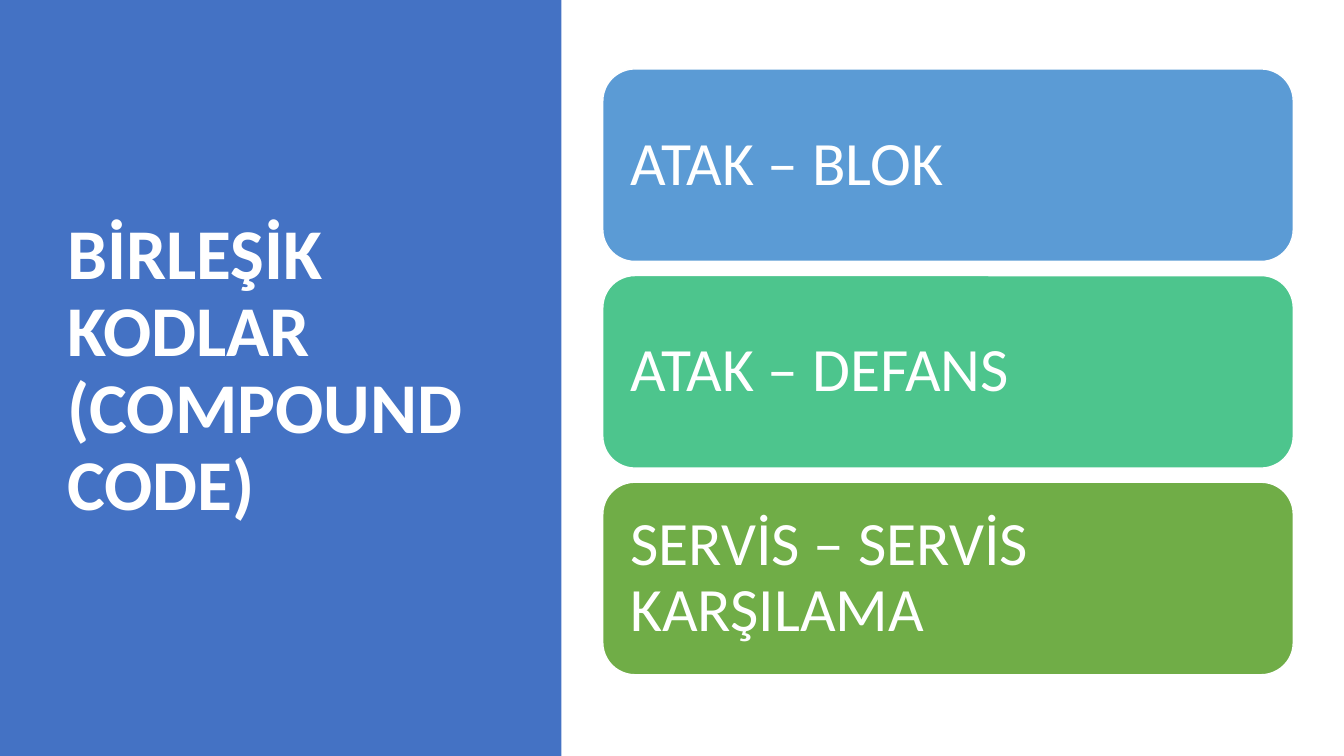
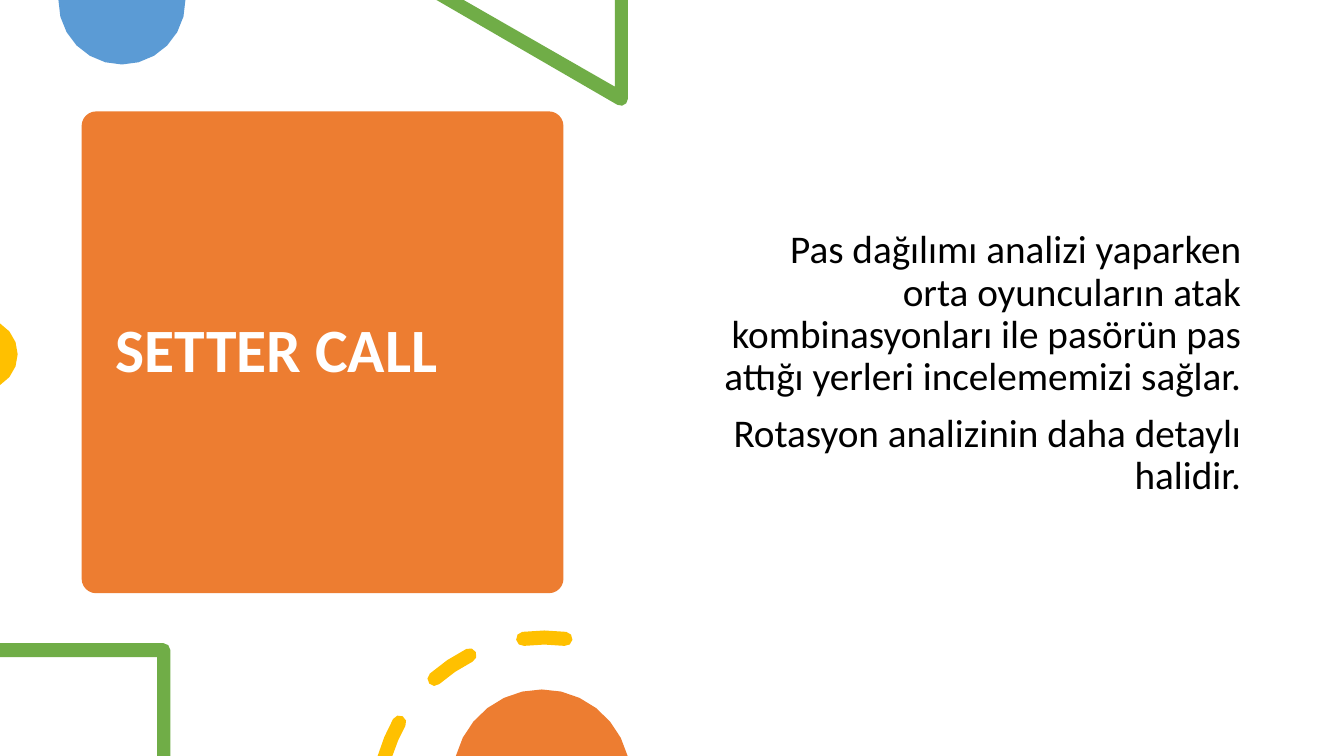
from dataclasses import dataclass
from math import acos, ceil, cos, degrees, radians, sin

from pptx import Presentation
from pptx.dml.color import RGBColor
from pptx.enum.shapes import MSO_SHAPE as Preset
from pptx.enum.text import MSO_ANCHOR as Anchor, PP_ALIGN as Align
from pptx.util import Inches, Pt

# Square grid: 133.33 columns by 75 rows, every length below is in grid units
COLUMNS, ROWS = 133.33, 75
CURVE_TOLERANCE = 0.06


def grid(units):
    return Inches(units / 10)


@dataclass(frozen=True)
class Theme:
    font: str = "Calibri"
    white: str = "FFFFFF"
    black: str = "000000"
    royal: str = "4472C4"
    blue: str = "5B9BD5"
    mint: str = "4DC58D"
    green: str = "70AD47"
    orange: str = "ED7D31"
    yellow: str = "FFC000"
    panel_title: int = 51
    heading: int = 44
    body: int = 28
    line_spacing: float = 0.9
    paragraph_gap: int = 10


THEME = Theme()


# Shapes and text
def paint(shape, color, outline=None):
    shape.shadow.inherit = False
    shape.fill.solid()
    shape.fill.fore_color.rgb = RGBColor.from_string(color)
    if outline:
        shape.line.color.rgb = RGBColor.from_string(outline)
        shape.line.width = Pt(1)
    else:
        shape.line.fill.background()


def add_block(slide, box, color, preset=Preset.RECTANGLE, outline=None):
    block = slide.shapes.add_shape(preset, *map(grid, box))
    paint(block, color, outline)
    return block


def write(shape, text, size, color=THEME.white, bold=False,
          align=Align.LEFT, anchor=Anchor.MIDDLE):
    frame = shape.text_frame
    frame.word_wrap = True
    frame.vertical_anchor = anchor
    frame.text = text
    for paragraph in frame.paragraphs:
        paragraph.alignment = align
        paragraph.line_spacing = THEME.line_spacing
        for run in paragraph.runs:
            run.font.name = THEME.font
            run.font.size = Pt(size)
            run.font.bold = bold
            run.font.color.rgb = RGBColor.from_string(color)
    return frame


def add_text(slide, box, text, size, **style):
    return write(slide.shapes.add_textbox(*map(grid, box)), text, size, **style)


def add_card(slide, box, text, color):
    card = add_block(slide, box, color, Preset.ROUNDED_RECTANGLE, THEME.white)
    frame = write(card, text, THEME.heading)
    frame.margin_left = frame.margin_right = grid(1.8)


# Ornaments: outlines made of points, angles clockwise from the right
def polar(center, radius, angle):
    x, y = center
    return x + radius * cos(radians(angle)), y + radius * sin(radians(angle))


def arc(center, radius, start, end):
    """Points on an arc, as few as the tolerance allows."""
    stride = 2 * degrees(acos(1 - CURVE_TOLERANCE / radius))
    steps = ceil(abs(end - start) / stride)
    return [polar(center, radius, start + (end - start) * step / steps)
            for step in range(steps + 1)]


def add_outline(slide, contours, color):
    pens = [[(grid(x), grid(y)) for x, y in contour] for contour in contours]
    builder = slide.shapes.build_freeform(*pens[0][0])
    for index, (first, *others) in enumerate(pens):
        if index:
            builder.move_to(*first)
        builder.add_line_segments(others, close=True)
    paint(builder.convert_to_shape(), color)


def add_cut_disc(slide, center, radius, facing, depth, color):
    """Disc cut by a slide edge that lies `depth` from its centre."""
    half = degrees(acos(depth / radius))
    add_outline(slide, [arc(center, radius, facing - half, facing + half)], color)


def dash(center, radius, thickness, middle, half):
    """Round-ended piece of a ring, cut where it meets the slide's bottom."""
    cap = thickness / 2
    start, end = middle - half, middle + half
    outer, inner = radius + cap, radius - cap
    drop = center[1] - ROWS

    def lowest(r):
        return 270 - degrees(acos(drop / r))

    rim = arc(center, outer, max(start, lowest(outer)), end)
    end_cap = arc(polar(center, radius, end), cap, end, end + 180)
    hollow = arc(center, inner, end, max(start, lowest(inner)))
    start_cap = arc(polar(center, radius, start), cap, start + 180, start + 360)
    # Neighbouring arcs share their end points, so each drops its first one
    return rim + end_cap[1:] + hollow[1:] + (
        start_cap[1:-1] if start > lowest(radius) else [])


def add_top_ornaments(slide):
    add_cut_disc(slide, (12.1, 0.1), 6.3, 90, -0.1, THEME.blue)
    triangle = [(62.3, 0), *arc((61.6, 9.8), 0.7, 0, 120),
                (43.3, 0), (46, 0), (61, 8.6), (61, 0)]
    add_outline(slide, [triangle], THEME.green)
    add_cut_disc(slide, (-1.8, 35.15), 3.55, 0, 1.8, THEME.yellow)


def add_bottom_ornaments(slide):
    frame = [(0, 63.8), *arc((16.2, 64.5), 0.7, -90, 0),
             (16.9, ROWS), (15.6, ROWS), (15.6, 65.2), (0, 65.2)]
    add_outline(slide, [frame], THEME.green)
    ring = [dash((54, 79.75), 16.5, 1.4, 270 - 34 * turn, 7.3)
            for turn in reversed(range(3))]
    add_outline(slide, ring, THEME.yellow)
    add_cut_disc(slide, (53.75, 77.2), 8.8, 270, 2.2, THEME.orange)


# Slides
def compound_codes(slide):
    add_block(slide, (0, 0, 55.7, ROWS), THEME.royal)
    add_text(slide, (5.7, 6.8, 41.6, 60.2), "BİRLEŞİK KODLAR (COMPOUND CODE)",
             THEME.panel_title, bold=True)
    codes = [("ATAK – BLOK", THEME.blue),
             ("ATAK – DEFANS", THEME.mint),
             ("SERVİS – SERVİS KARŞILAMA", THEME.green)]
    height, gap = 19.1, 1.4
    for row, (code, color) in enumerate(codes):
        add_card(slide, (59.8, 6.84 + row * (height + gap), 68.5, height), code, color)


def setter_call(slide):
    square = add_block(slide, (8.1, 11.05, 47.8, 47.8), THEME.orange,
                       Preset.ROUNDED_RECTANGLE)
    square.adjustments[0] = 0.03
    add_text(slide, (10.5, 12.2, 43.1, 45.6), "SETTER CALL", THEME.heading, bold=True)
    add_top_ornaments(slide)

    explanation = add_text(
        slide, (66.65, 22.32, 57.45, 34),
        "Pas dağılımı analizi yaparken orta oyuncuların atak kombinasyonları "
        "ile pasörün pas attığı yerleri incelememizi sağlar.\n"
        "Rotasyon analizinin daha detaylı halidir.",
        THEME.body, color=THEME.black, align=Align.RIGHT, anchor=Anchor.TOP)
    for paragraph in explanation.paragraphs:
        paragraph.space_before = Pt(THEME.paragraph_gap)
    # First-line indent of the opening paragraph
    opening = explanation.paragraphs[0]._p.get_or_add_pPr()
    opening.set("marL", "0")
    opening.set("indent", str(grid(5)))

    add_bottom_ornaments(slide)


def main():
    deck = Presentation()
    deck.slide_width, deck.slide_height = grid(COLUMNS), grid(ROWS)
    blank = deck.slide_layouts[6]
    for build in (compound_codes, setter_call):
        build(deck.slides.add_slide(blank))
    deck.save("out.pptx")


if __name__ == "__main__":
    main()
